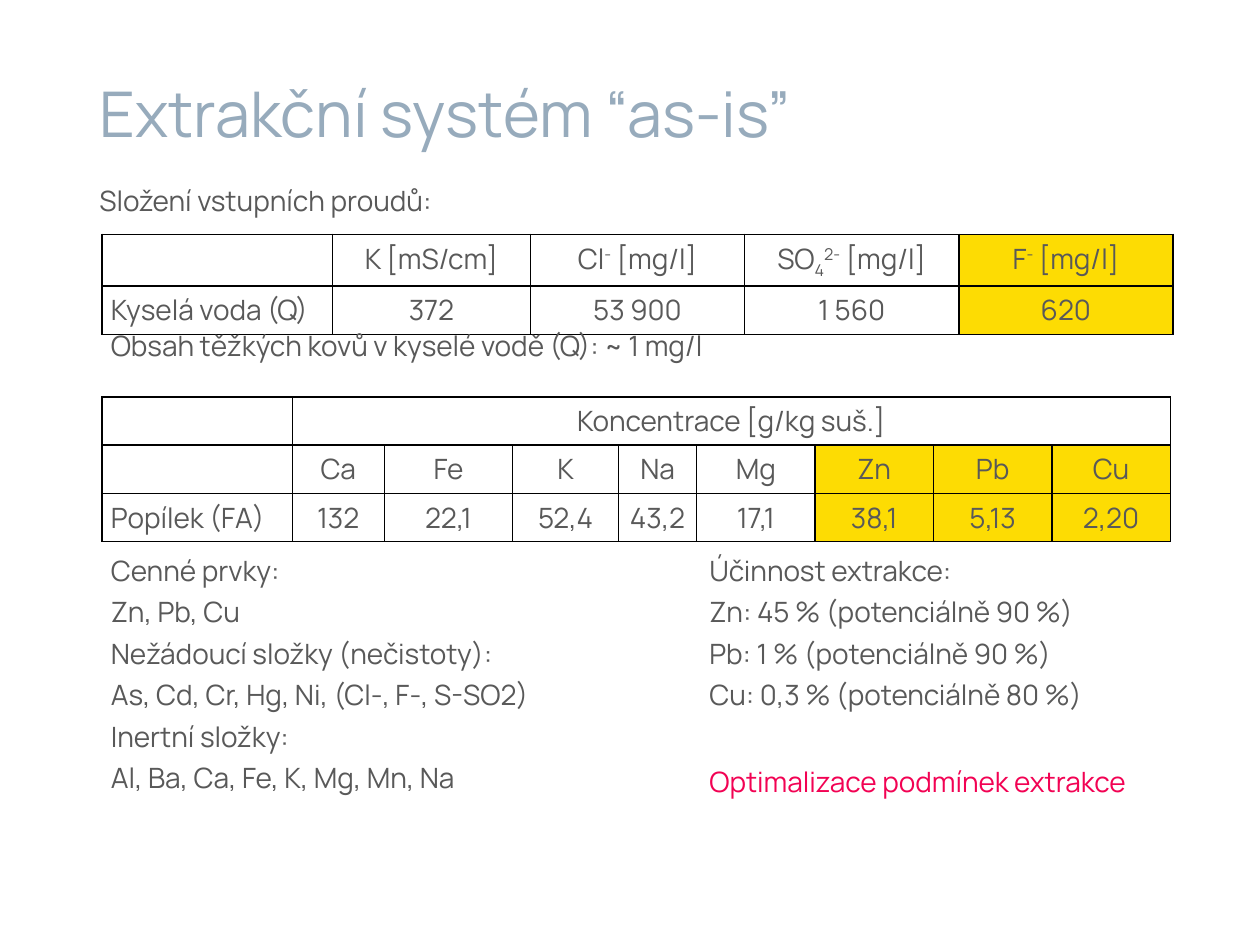
from dataclasses import dataclass

from lxml.etree import SubElement
from pptx import Presentation
from pptx.dml.color import RGBColor
from pptx.enum.text import MSO_ANCHOR as Anchor, MSO_AUTO_SIZE as AutoSize, PP_ALIGN as Align
from pptx.oxml.ns import qn
from pptx.util import Inches, Pt

FONT = "Manrope"
GREY, BLUE, PINK = "595959", "97ABBC", "F20253"
YELLOW, BLACK = "FDDC03", "000000"
SUP, SUB = 30, -25  # baseline shift in percent


@dataclass
class Note:
    box: tuple
    lines: list
    colour: str = GREY
    inset: float = 0.07
    before: float = 4.5
    wrap: bool = True


@dataclass
class Grid:
    box: tuple
    cols: list
    rows: list
    cells: list
    marked: set  # (row, column) of highlighted cells
    merge: tuple = ()


def rgb(colour: str) -> RGBColor:
    return RGBColor.from_string(colour)


def set_insets(target, x: float, y: float) -> None:
    margins = {"margin_left": x, "margin_right": x, "margin_top": y, "margin_bottom": y}
    for name, value in margins.items():
        setattr(target, name, Inches(value))


def add_run(p, text: str, size: float = 16, colour: str = GREY, shift: int = 0) -> None:
    r = p.add_run()
    r.text = text
    for name, value in {"name": FONT, "size": Pt(size)}.items():
        setattr(r.font, name, value)
    r.font.color.rgb = rgb(colour)
    if shift:
        r.font._element.set("baseline", str(shift * 1000))


def add_note(slide, note: Note) -> None:
    tf = slide.shapes.add_textbox(*map(Inches, note.box)).text_frame
    tf.word_wrap = note.wrap
    tf.auto_size = AutoSize.NONE if note.wrap else AutoSize.SHAPE_TO_FIT_TEXT
    set_insets(tf, note.inset, min(note.inset, 0.07))
    for i, line in enumerate(note.lines):
        p = tf.add_paragraph() if i else tf.paragraphs[0]
        p.space_before = Pt(note.before)
        add_run(p, line, colour=note.colour)


def add_borders(cell) -> None:
    tc_pr = cell._tc.get_or_add_tcPr()
    for i, side in enumerate(("lnL", "lnR", "lnT", "lnB")):
        ln = SubElement(tc_pr, qn(f"a:{side}"), w=str(Pt(1)))
        SubElement(SubElement(ln, qn("a:solidFill")), qn("a:srgbClr"), val=BLACK)
        tc_pr.remove(ln)
        tc_pr.insert(i, ln)  # borders come before the fill


def add_grid(slide, grid: Grid) -> None:
    frame = slide.shapes.add_table(len(grid.rows), len(grid.cols), *map(Inches, grid.box))
    table = frame.table
    for name in ("first_row", "horz_banding"):
        setattr(table, name, False)
    for column, width in zip(table.columns, grid.cols):
        column.width = Inches(width)
    for row, height in zip(table.rows, grid.rows):
        row.height = Inches(height)
    frame.height = Inches(grid.box[3])

    for i, row in enumerate(grid.cells):
        for j, content in enumerate(row):
            cell = table.cell(i, j)
            set_insets(cell, 0.07, 0.04)
            if (i, j) in grid.marked:
                cell.fill.solid()
                cell.fill.fore_color.rgb = rgb(YELLOW)
            else:
                cell.fill.background()
            add_borders(cell)
            p = cell.text_frame.paragraphs[0]
            p.alignment = Align.CENTER if j else Align.LEFT
            parts = [(content, 0)] if isinstance(content, str) else content
            for text, shift in parts:
                add_run(p, text, shift=shift)
    if grid.merge:
        start, end = grid.merge
        table.cell(*start).merge(table.cell(*end))


UNIT = (" [mg/l]", 0)
ACID_WATER = Grid(
    (0.81, 1.86, 8.5, 0.68), [1.83, 1.57, 1.7, 1.7, 1.7], [0.3, 0.3],
    [["", "K [mS/cm]", [("Cl", 0), ("-", SUP), UNIT],
      [("SO", 0), ("4", SUB), ("2-", SUP), UNIT], [("F", 0), ("-", SUP), UNIT]],
     ["Kyselá voda (Q)", "372", "53 900", "1 560", "620"]],
    {(0, 4), (1, 4)},
)
FLY_ASH = Grid(
    (0.81, 3.15, 8.5, 1.02), [1.51, 0.73, 1.02, 0.84, 0.62] + [0.94] * 4, [0, 0.3, 0.3],
    [["", "Koncentrace [g/kg suš.]"],
     ["", "Ca", "Fe", "K", "Na", "Mg", "Zn", "Pb", "Cu"],
     ["Popílek (FA)", "132", "22,1", "52,4", "43,2", "17,1", "38,1", "5,13", "2,20"]],
    {(i, j) for i in (1, 2) for j in (6, 7, 8)},
    ((0, 1), (0, 8)),
)
NOTES = [
    Note((0.69, 1.39, 2.88, 0.37), ["Složení vstupních proudů:"],
         inset=0.1, before=0, wrap=False),
    Note((0.81, 2.54, 8, 0.51), ["Obsah těžkých kovů v kyselé vodě (Q): ~ 1 mg/l"]),
    Note((0.81, 4.32, 4.09, 2.65),
         ["Cenné prvky:", "Zn, Pb, Cu",
          "Nežádoucí složky (nečistoty):", "As, Cd, Cr, Hg, Ni, (Cl-, F-, S-SO2)",
          "Inertní složky:", "Al, Ba, Ca, Fe, K, Mg, Mn, Na"]),
    Note((5.56, 4.32, 3.75, 1.58),
         ["Účinnost extrakce:", "Zn: 45 % (potenciálně 90 %)",
          "Pb: 1 % (potenciálně 90 %)", "Cu: 0,3 % (potenciálně 80 %)"]),
    Note((5.56, 6, 3.75, 0.59), ["Optimalizace podmínek extrakce"], PINK),
]


def main() -> None:
    prs = Presentation()
    prs.slide_width, prs.slide_height = Inches(10), Inches(7.5)
    slide = prs.slides.add_slide(prs.slide_layouts[5])

    # Title
    title = slide.shapes.title
    for name, value in zip(("left", "top", "width", "height"), (0.69, 0.68, 8.62, 0.61)):
        setattr(title, name, Inches(value))
    tf = title.text_frame
    tf.vertical_anchor = Anchor.BOTTOM
    tf.auto_size = AutoSize.NONE
    set_insets(tf, 0.1, 0.1)
    tf.paragraphs[0].alignment = Align.LEFT
    add_run(tf.paragraphs[0], "Extrakční systém “as-is”", 36, BLUE)

    # Compositions of the input streams
    for grid in (ACID_WATER, FLY_ASH):
        add_grid(slide, grid)

    # Comments around the tables
    for note in NOTES:
        add_note(slide, note)

    prs.save("out.pptx")


if __name__ == "__main__":
    main()
